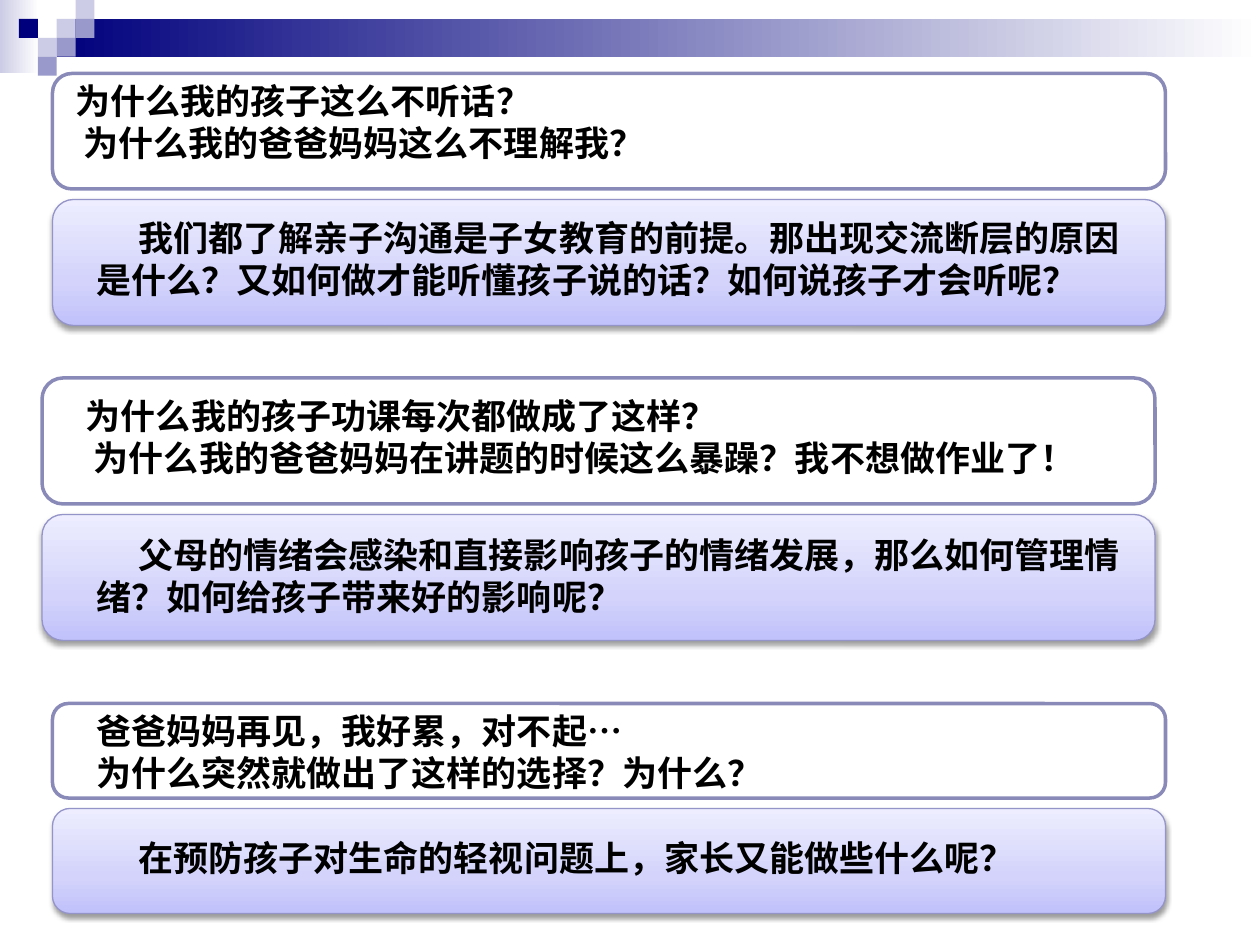
from lxml import etree
from pptx import Presentation
from pptx import util as u
from pptx.dml.color import RGBColor
from pptx.enum import shapes, text
from pptx.oxml import ns

Pt = u.Pt
rgb = RGBColor.from_string
JP, SC = "Noto Sans CJK JP", "Noto Sans CJK SC"
kind = shapes.MSO_SHAPE


def add_box(form, place, stops, angle=0):
    """Add a shape filled with one colour or with a gradient of (percent, colour) stops."""
    box = slide.shapes.add_shape(form, *map(Pt, place))
    box.shadow.inherit = False
    box.line.fill.background()
    if len(stops) == 1:
        box.fill.solid()
        box.fill.fore_color.rgb = rgb(stops[0][1])
        return box
    box.fill.gradient()
    box.fill.gradient_angle = angle
    bands = box.element.spPr.find(".//" + ns.qn("a:gsLst"))
    for old in list(bands):
        bands.remove(old)
    for pos, hue in stops:
        band = etree.SubElement(bands, ns.qn("a:gs"), pos=str(pos * 1000))
        etree.SubElement(band, ns.qn("a:srgbClr"), val=hue)
    return box


def add_text(place, lines, font, wrap, indent=0):
    """Add bold 20 pt lines, centred vertically."""
    frame = slide.shapes.add_textbox(*map(Pt, place)).text_frame
    frame.word_wrap = wrap
    frame.auto_size = text.MSO_AUTO_SIZE.SHAPE_TO_FIT_TEXT
    frame.vertical_anchor = text.MSO_ANCHOR.MIDDLE
    frame.text = "\n".join(lines)
    for para in frame.paragraphs:
        if indent:
            props = para._p.get_or_add_pPr()
            props.set("marL", "0")
            props.set("indent", str(Pt(indent)))
        for run in para.runs:
            run.font.size = Pt(20)
            run.font.bold = True
            run.font.name = font
            run.font.color.rgb = rgb("000000")
            east = etree.SubElement(run.font._element, ns.qn("a:ea"))
            east.set("typeface", font)


deck = Presentation()
deck.slide_width, deck.slide_height = Pt(720), Pt(540)
slide = deck.slides.add_slide(deck.slide_layouts[6])

# Top band: two gradient bars and a mosaic of small squares
add_box(kind.RECTANGLE, (0, 0, 22.3, 41.8), [(0, "CCCCE6"), (100, "FFFFFF")])
add_box(kind.RECTANGLE, (32.4, 10.8, 687.6, 21.6), [(0, "00007D"), (100, "FFFFFF")])
side = 10.8
tiles = [
    (3, 1, "CCCCE6"), (4, 0, "CCCCE6"), (4, 1, "9999CC"), (2, 2, "CCCCE6"),
    (1, 1, "00007D"), (3, 2, "9999CC"), (2, 3, "9999CC"),
]
for col, row, hue in tiles:
    add_box(kind.RECTANGLE, (col * side, row * side, side, side), [(0, hue)])

# Each topic: left edge, then question and answer as
# (top, height, text place, wrap, lines)
topics = [
    (30,
     (42, 66, (36, 42, 618, 55.4), True,
      ["为什么我的孩子这么不听话？", " 为什么我的爸爸妈妈这么不理解我？"]),
     (114, 72, (48, 120, 606, 55.4), True,
      ["我们都了解亲子沟通是子女教育的前提。那出现交流断层的原因是什么？"
       "又如何做才能听懂孩子说的话？如何说孩子才会听呢？"])),
    (24,
     (216, 72, (42, 222, 624, 55.4), True,
      ["为什么我的孩子功课每次都做成了这样？",
       " 为什么我的爸爸妈妈在讲题的时候这么暴躁？我不想做作业了！"]),
     (294, 72, (48, 300, 612, 57.6), True,
      ["父母的情绪会感染和直接影响孩子的情绪发展，那么如何管理情绪？"
       "如何给孩子带来好的影响呢？"])),
    (30,
     (402, 54, (48, 402, 403.2, 55.4), False,
      ["爸爸妈妈再见，我好累，对不起…", "为什么突然就做出了这样的选择？为什么？"]),
     (462, 60, (48, 474, 546.5, 31.5), False,
      ["在预防孩子对生命的轻视问题上，家长又能做些什么呢？"])),
]
wide = 636
for left, ask, reply in topics:
    # Question: white panel with a thick outline
    top, high, place, wrap, lines = ask
    panel = add_box(kind.ROUNDED_RECTANGLE, (left, top, wide, high), [(0, "FFFFFF")])
    panel.line.color.rgb = rgb("8A8AB9")
    panel.line.width = Pt(2)
    add_text(place, lines, JP, wrap)

    # Answer: lilac panel with a soft shadow
    top, high, place, wrap, lines = reply
    panel = add_box(kind.ROUNDED_RECTANGLE, (left, top, wide, high),
                    [(0, "C1C1FB"), (35, "D3D3FB"), (100, "EDEDFF")], 90)
    panel.line.color.rgb = rgb("9494C9")
    panel.line.width = Pt(0.75)
    effects = panel.element.spPr.find(ns.qn("a:effectLst"))
    shade = etree.SubElement(effects, ns.qn("a:outerShdw"), blurRad=str(Pt(3.1)),
                             dist=str(Pt(1.6)), dir="5400000", rotWithShape="0")
    tint = etree.SubElement(shade, ns.qn("a:srgbClr"), val="000000")
    etree.SubElement(tint, ns.qn("a:alpha"), val="38000")
    add_text(place, lines, SC, wrap, indent=24)

deck.save("out.pptx")
